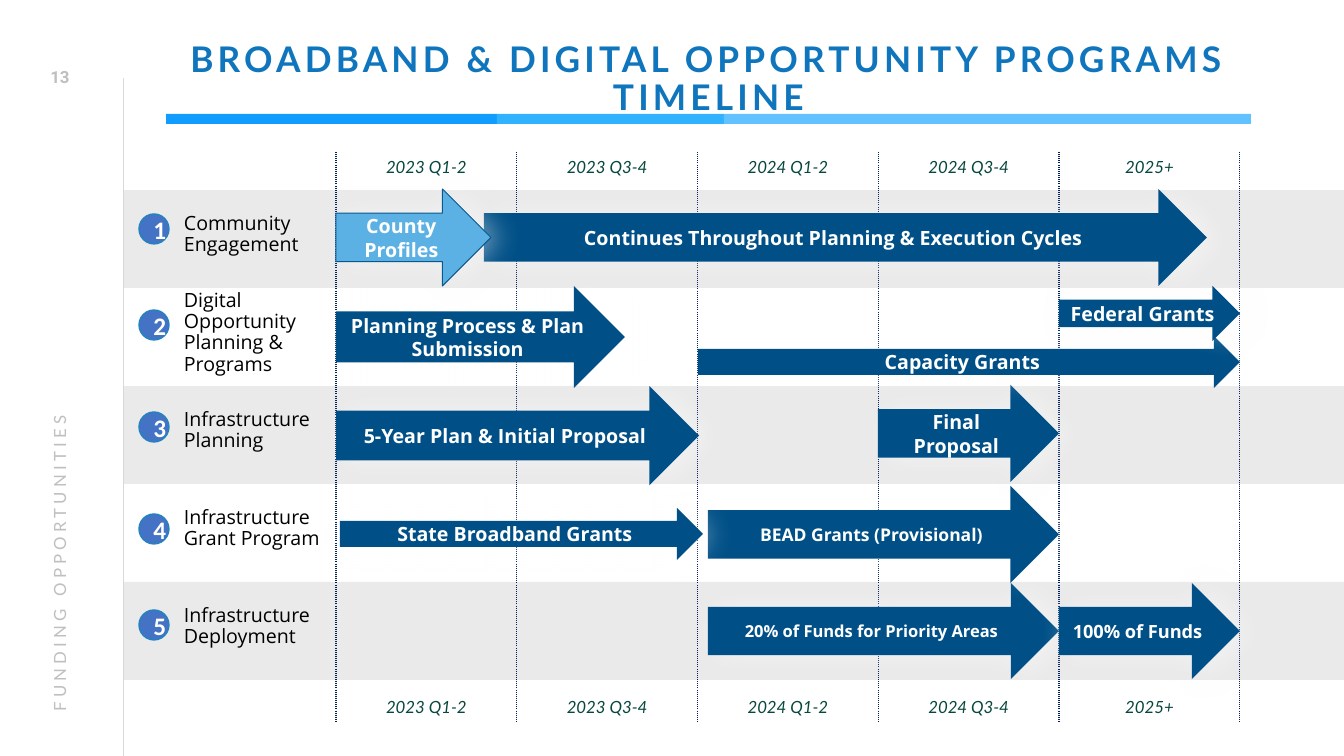
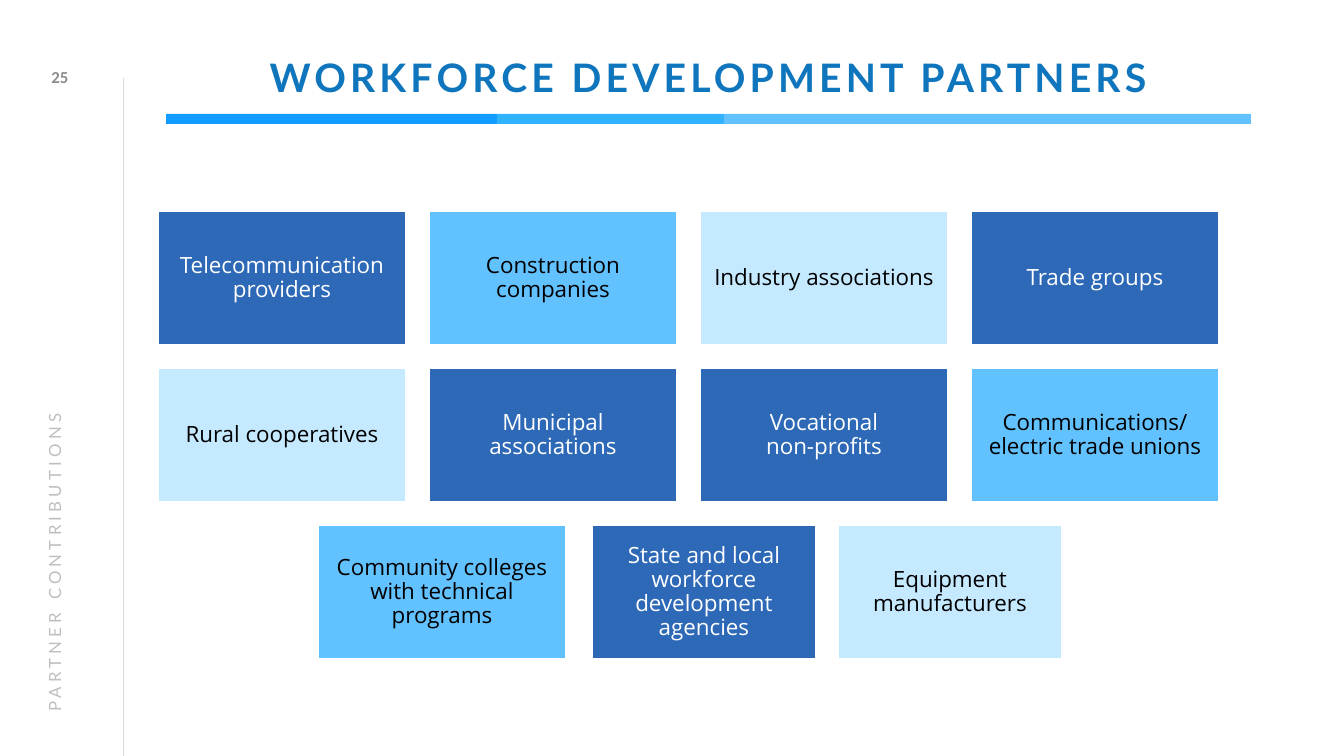
from lxml.etree import SubElement
from pptx import Presentation
from pptx.dml.color import RGBColor
from pptx.enum.shapes import MSO_CONNECTOR, MSO_SHAPE
from pptx.enum.text import MSO_ANCHOR, PP_ALIGN
from pptx.oxml import parse_xml
from pptx.oxml.ns import nsdecls, qn
from pptx.util import Emu, Pt

PX_PER_INCH = 100.8
NO_STYLE_TABLE = "{2D5ABB26-0587-4C30-8999-92F81FD0307C}"

HEADING, BODY = "Lato", "Open Sans"
TITLE_BLUE, ARROW_BLUE, COUNTY_BLUE = "0F75BC", "005087", "5CB1E4"
CARD_DARK, CARD_MID, CARD_LIGHT = "2D69B6", "62C1FF", "C5EAFF"
WHITE, BLACK, PALE_GRAY = "FFFFFF", "000000", "BFBFBF"


def px(length):
    return Emu(round(length * 914400 / PX_PER_INCH))


def color(value):
    return RGBColor.from_string(value)


def style_text(frame, text, size, font, ink, bold=False, italic=False,
               align=PP_ALIGN.CENTER, anchor=MSO_ANCHOR.MIDDLE,
               line_spacing=None, tracking=None):
    frame.text = text
    frame.word_wrap = True
    frame.vertical_anchor = anchor
    for paragraph in frame.paragraphs:
        paragraph.alignment = align
        if line_spacing:
            paragraph.line_spacing = line_spacing
        for run in paragraph.runs:
            run.font.size = Pt(size)
            run.font.name = font
            run.font.bold = bold
            run.font.italic = italic
            run.font.color.rgb = color(ink)
            if tracking:
                run._r.get_or_add_rPr().set("spc", str(tracking * 100))


def add_text(slide, box, text, size, font, ink, **style):
    shape = slide.shapes.add_textbox(*map(px, box))
    style_text(shape.text_frame, text, size, font, ink, **style)
    return shape


def add_block(slide, kind, box, fill, line=None, line_width=1):
    shape = slide.shapes.add_shape(kind, *map(px, box))
    shape.fill.solid()
    shape.fill.fore_color.rgb = color(fill)
    if line:
        shape.line.color.rgb = color(line)
        shape.line.width = Pt(line_width)
    else:
        shape.line.fill.background()
    shape.shadow.inherit = False
    return shape


def add_frame(slide, title, title_size, section, section_anchor,
              number, number_font, number_ink):
    # Margin rule
    rule = slide.shapes.add_connector(
        MSO_CONNECTOR.STRAIGHT, px(123), px(756), px(123), px(78))
    rule.line.color.rgb = color("D9D9D9")
    rule.line.width = Pt(0.5)
    SubElement(rule._element.spPr, qn("a:effectLst"))

    # Three-part bar under the title
    left = 166
    for width, fill in ((331, "119DFF"), (227, "31B2FF"), (527, "62C1FF")):
        add_block(slide, MSO_SHAPE.RECTANGLE, (left, 114, width, 10), fill)
        left += width

    # Title
    heading = add_text(slide, (166, 40, 1085, 75), title, title_size, HEADING,
                       TITLE_BLUE, bold=True, line_spacing=0.9, tracking=3)
    frame = heading.text_frame
    frame.margin_left = frame.margin_right = frame.margin_bottom = 0

    # Section name up the margin, and page number
    label = add_text(slide, (-244, 398, 607, 40), section, 12, HEADING, PALE_GRAY,
                     align=PP_ALIGN.LEFT, anchor=section_anchor, tracking=3)
    label.rotation = 270
    add_text(slide, (27, 57, 66, 40), number, 12, number_font, number_ink, bold=True)


def add_period_grid(slide, box, periods):
    left, top, width, height = box
    graphic = slide.shapes.add_table(2, len(periods), *map(px, box))
    table = graphic.table
    table.first_row = table.horz_banding = False
    graphic._element.find(".//" + qn("a:tableStyleId")).text = NO_STYLE_TABLE
    for column in table.columns:
        column.width = px(width / len(periods))
    for row, anchor in zip(table.rows, (MSO_ANCHOR.TOP, MSO_ANCHOR.BOTTOM)):
        row.height = px(height / 2)
        for cell, period in zip(row.cells, periods):
            style_text(cell.text_frame, period, 12, HEADING, "08473D", italic=True)
            cell.vertical_anchor = anchor
            cell.fill.background()
            for index, side in enumerate(("lnL", "lnR")):
                cell._tc.get_or_add_tcPr().insert(index, parse_xml(
                    f'<a:{side} {nsdecls("a")} w="12700"><a:solidFill>'
                    '<a:srgbClr val="002060"/></a:solidFill>'
                    f'<a:prstDash val="sysDot"/></a:{side}>'))


def add_row(slide, box, number, label, badge_top, banded):
    left, top, width, height = box
    if banded:
        band = add_block(slide, MSO_SHAPE.RECTANGLE, box, "D7D7D8")
        fill_color = band._element.spPr.find(".//" + qn("a:srgbClr"))
        SubElement(fill_color, qn("a:alpha")).set("val", "50000")
    badge = add_block(slide, MSO_SHAPE.OVAL, (left + 15, top + badge_top, 30, 30),
                      "4472C4", "2483BD")
    style_text(badge.text_frame, str(number), 18, "Calibri", WHITE, bold=True)
    add_text(slide, (left + 50, top - 4, 169, height), label, 14, BODY, BLACK,
             align=PP_ALIGN.LEFT, line_spacing=0.9)


def add_arrow(slide, box, text, size=14, fill=ARROW_BLUE, line=None):
    arrow = add_block(slide, MSO_SHAPE.RIGHT_ARROW, box, fill, line, 0.75)
    style_text(arrow.text_frame, text, size, BODY, WHITE, bold=True)
    # Soft white glow
    arrow._element.spPr.find(qn("a:effectLst")).append(parse_xml(
        f'<a:outerShdw {nsdecls("a")} blurRad="254000" dist="76200" dir="60000">'
        '<a:srgbClr val="FFFFFF"><a:alpha val="45000"/></a:srgbClr></a:outerShdw>'))


def add_card(slide, box, text, fill):
    card = add_block(slide, MSO_SHAPE.RECTANGLE, box, fill, WHITE)
    frame = card.text_frame
    frame.margin_left = frame.margin_right = px(7)
    frame.margin_top = frame.margin_bottom = px(7)
    ink = WHITE if fill == CARD_DARK else BLACK
    style_text(frame, text, 16, BODY, ink, line_spacing=0.9)


def build_timeline(slide):
    add_frame(slide, "BROADBAND & DIGITAL OPPORTUNITY PROGRAMS TIMELINE", 25.2,
              "FUNDING OPPORTUNITIES", MSO_ANCHOR.MIDDLE, "13", "Roboto", PALE_GRAY)

    # Program rows: label, badge offset
    rows = (
        ("Community Engagement", 24),
        ("Digital Opportunity Planning & Programs", 22),
        ("Infrastructure Planning", 26),
        ("Infrastructure Grant Program", 30),
        ("Infrastructure Deployment", 28),
    )
    for index, (label, badge_top) in enumerate(rows):
        add_row(slide, (124, 190 + 98 * index, 1220, 98), index + 1, label,
                badge_top, banded=index % 2 == 0)

    # Periods
    add_period_grid(slide, (336, 152, 904, 570),
                    ("2023 Q1-2", "2023 Q3-4", "2024 Q1-2", "2024 Q3-4", "2025+"))

    # Activities
    for box, text, size in (
        ((708, 583, 351, 96), "20% of Funds for Priority Areas", 11.8),
        ((1059, 583, 181, 96), "100% of Funds", 13),
        ((878, 385, 181, 97), "Final Proposal", 14),
        ((708, 486, 351, 97), "BEAD Grants (Provisional)", 12.5),
        ((336, 386, 363, 99), "5-Year Plan & Initial Proposal", 14),
        ((698, 336, 542, 52), "Capacity Grants", 14),
        ((1059, 286, 181, 55), "Federal Grants", 14),
        ((336, 286, 289, 102), "Planning Process & Plan Submission", 14),
        ((484, 189, 723, 97), "Continues Throughout Planning & Execution Cycles", 14),
        ((340, 508, 363, 52), "State Broadband Grants", 14),
    ):
        add_arrow(slide, box, text, size)
    add_arrow(slide, (336, 189, 155, 97), "County Profiles",
              fill=COUNTY_BLUE, line="0B588D")


def build_partners(slide):
    add_frame(slide, "WORKFORCE DEVELOPMENT PARTNERS", 28,
              "PARTNER CONTRIBUTIONS", MSO_ANCHOR.TOP, "25", "Calibri", "8C8C8C")

    # Cards by row: column spans, then text and fill
    four_columns = [(158 + 271 * column, 248) for column in range(4)]
    three_columns = [(318, 248), (592, 224), (838, 224)]
    rows = (
        (four_columns, (
            ("Telecommunication providers", CARD_DARK),
            ("Construction companies", CARD_MID),
            ("Industry associations", CARD_LIGHT),
            ("Trade groups", CARD_DARK))),
        (four_columns, (
            ("Rural cooperatives", CARD_LIGHT),
            ("Municipal associations", CARD_DARK),
            ("Vocational\vnon-profits", CARD_DARK),
            ("Communications/ electric trade unions", CARD_MID))),
        (three_columns, (
            ("Community colleges with technical programs", CARD_MID),
            ("State and local workforce development agencies", CARD_DARK),
            ("Equipment manufacturers", CARD_LIGHT))),
    )
    for index, (columns, cards) in enumerate(rows):
        for (left, width), (text, fill) in zip(columns, cards):
            add_card(slide, (left, 211 + 157 * index, width, 134), text, fill)


def main():
    presentation = Presentation()
    presentation.slide_width = px(1344)
    presentation.slide_height = px(756)
    blank = presentation.slide_layouts[6]
    for build in (build_timeline, build_partners):
        build(presentation.slides.add_slide(blank))
    presentation.save("out.pptx")


if __name__ == "__main__":
    main()
